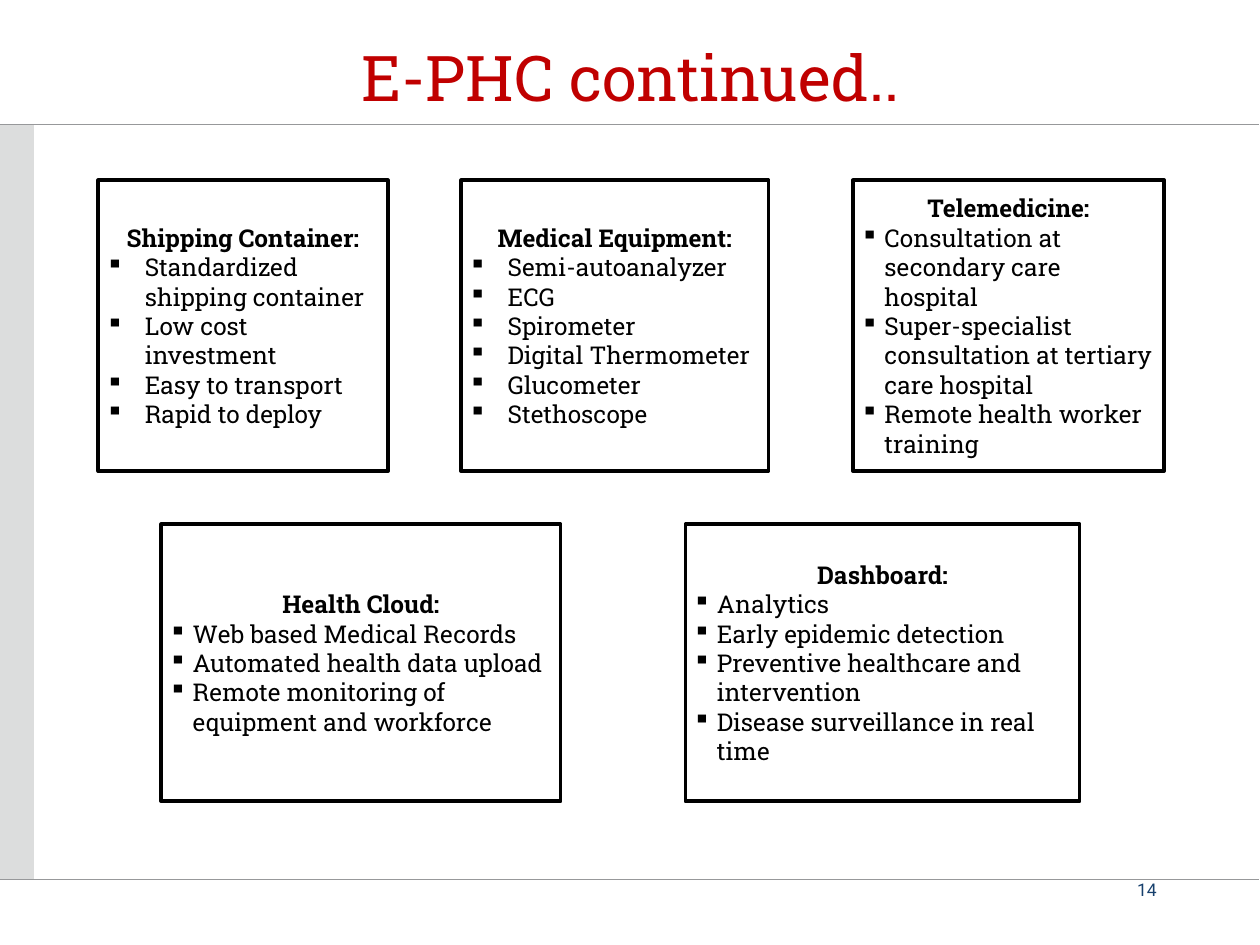
from lxml.etree import SubElement
from pptx import Presentation
from pptx.dml.color import RGBColor as Color
from pptx.enum.shapes import MSO_CONNECTOR as Connector, MSO_SHAPE as Shape
from pptx.enum.text import MSO_ANCHOR as Anchor, PP_ALIGN as Align
from pptx.oxml.ns import qn
from pptx.util import Inches, Pt

COLORS = {"title": "C00000", "ink": "000000", "card": "FFFFFF",
          "band": "DCDDDD", "rule": "97989A", "number": "17406D"}
COLUMNS, ROWS = 100, 75
WIDTH, HEIGHT = Inches(10), Inches(7.5)
HEADER_ROW, FOOTER_ROW = 9.9, 69.8
WIDE, NARROW = 3.1, 1.9

TOP_CARDS = [
    (7.8, 23, "Shipping Container:", WIDE,
     ["Standardized shipping container", "Low cost investment",
      "Easy to transport", "Rapid to deploy"]),
    (36.6, 24.4, "Medical Equipment:", WIDE,
     ["Semi-autoanalyzer", "ECG", "Spirometer", "Digital Thermometer",
      "Glucometer", "Stethoscope"]),
    (67.7, 24.7, "Telemedicine:", NARROW,
     ["Consultation at secondary care hospital",
      "Super-specialist consultation at tertiary care hospital",
      "Remote health worker training"]),
]
BOTTOM_CARDS = [
    (12.8, 31.7, "Health Cloud:", NARROW,
     ["Web based Medical Records", "Automated health data upload",
      "Remote monitoring of equipment and workforce"]),
    (54.4, 31.3, "Dashboard:", NARROW,
     ["Analytics", "Early epidemic detection",
      "Preventive healthcare and intervention",
      "Disease surveillance in real time"]),
]


def across(columns):
    return round(WIDTH * columns / COLUMNS)


def down(rows):
    return round(HEIGHT * rows / ROWS)


def place(box):
    left, top, width, height = box
    return across(left), down(top), across(width), down(height)


def color(name):
    return Color.from_string(COLORS[name])


def set_frame(frame, anchor, inset=0):
    frame.word_wrap = True
    frame.vertical_anchor = anchor
    frame.margin_left = frame.margin_right = across(inset)
    frame.margin_top = frame.margin_bottom = down(inset)


def add_span(para, text, size, ink, font="Roboto Slab", bold=False):
    span = para.add_run()
    span.text = text
    span.font.name = font
    span.font.size = Pt(size)
    span.font.bold = bold
    span.font.color.rgb = color(ink)


def add_label(page, box, text, size, ink, font, align, anchor, spacing=None):
    label = page.shapes.add_textbox(*place(box))
    set_frame(label.text_frame, anchor)
    para = label.text_frame.paragraphs[0]
    para.alignment = align
    para.line_spacing = spacing
    add_span(para, text, size, ink, font)


def add_block(page, box, fill):
    block = page.shapes.add_shape(Shape.RECTANGLE, *place(box))
    block.shadow.inherit = False
    block.fill.solid()
    block.fill.fore_color.rgb = color(fill)
    return block


def add_rule(page, row):
    rule = page.shapes.add_connector(Connector.STRAIGHT, 0, down(row),
                                     across(99.9), down(row))
    rule.line.color.rgb = color("rule")
    rule.line.width = Pt(0.5)
    SubElement(rule._element.spPr, qn("a:effectLst"))


def add_bullet(para, indent):
    properties = para._p.get_or_add_pPr()
    properties.set("marL", str(across(indent)))
    properties.set("indent", str(-across(indent)))
    SubElement(properties, qn("a:buChar")).set("char", "▪")


def add_card(page, box, heading, indent, items):
    card = add_block(page, box, "card")
    card.line.color.rgb = color("ink")
    card.line.width = Pt(2)
    frame = card.text_frame
    set_frame(frame, Anchor.MIDDLE, 0.6)
    para = frame.paragraphs[0]
    para.alignment = Align.CENTER
    add_span(para, heading, 14, "ink", bold=True)
    for item in items:
        para = frame.add_paragraph()
        para.alignment = Align.LEFT
        add_bullet(para, indent)
        add_span(para, item, 14, "ink")


def add_card_row(page, top, height, cards):
    for left, width, heading, indent, items in cards:
        add_card(page, (left, top, width, height), heading, indent, items)


def add_surround(page):
    add_label(page, (78.7, FOOTER_ROW, 13.1, 1.6), "14", 10, "number",
              "Roboto", Align.RIGHT, Anchor.BOTTOM)
    band = add_block(page, (0, HEADER_ROW, 2.7, FOOTER_ROW - HEADER_ROW), "band")
    band.line.fill.background()
    for row in (FOOTER_ROW, HEADER_ROW):
        add_rule(page, row)


def main():
    deck = Presentation()
    deck.slide_width, deck.slide_height = WIDTH, HEIGHT
    page = deck.slides.add_slide(deck.slide_layouts[6])
    add_surround(page)
    add_label(page, (8.3, 4.7, 83.5, 5.7), "E-PHC continued..", 36, "title",
              "Roboto Slab", Align.CENTER, Anchor.TOP, 0.7)
    add_card_row(page, 14.3, 23.1, TOP_CARDS)
    add_card_row(page, 41.6, 22, BOTTOM_CARDS)
    deck.save("out.pptx")


if __name__ == "__main__":
    main()
